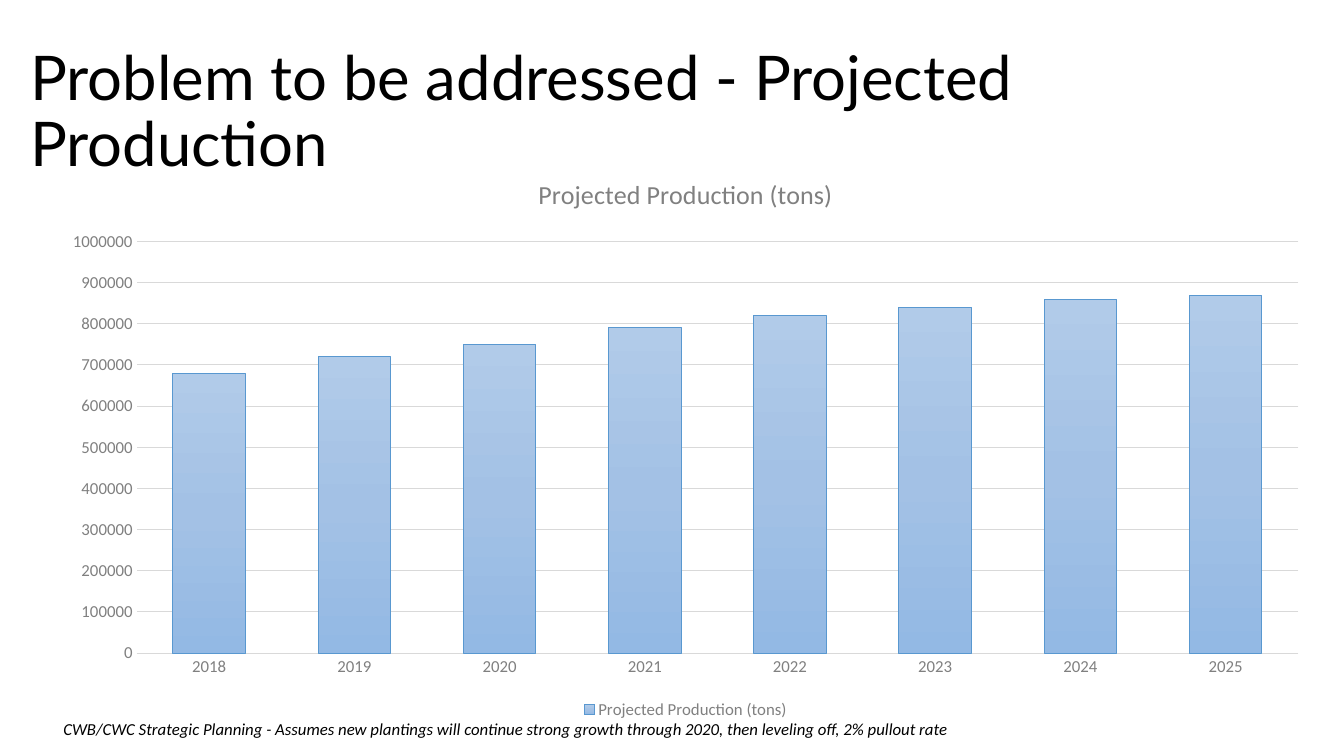
from lxml import etree
from pptx import Presentation
from pptx import util as u
from pptx.chart.data import CategoryChartData
from pptx.dml.color import RGBColor
from pptx.enum import chart as ch, text
from pptx.oxml.ns import qn

PX = 9144  # 100 px to the inch
BLACK = RGBColor(0x00, 0x00, 0x00)
GRAY = RGBColor(0x80, 0x80, 0x80)
RULE = RGBColor(0xD9, 0xD9, 0xD9)
EDGE = RGBColor(0x59, 0x98, 0xD0)
SHADES = [
    RGBColor(0xB1, 0xCB, 0xE9),
    RGBColor(0xA3, 0xC1, 0xE5),
    RGBColor(0x93, 0xB9, 0xE4),
]

YEARS = [str(year) for year in range(2018, 2026)]
TONS = [680000, 720000, 750000, 790000, 820000, 840000, 860000, 870000]


class Deck:
    head = "Lato"
    body = "Calibri"

    def __init__(self, wide, high):
        self.prs = Presentation()
        self.prs.slide_width = wide * PX
        self.prs.slide_height = high * PX
        self.slide = self.prs.slides.add_slide(self.prs.slide_layouts[6])

    def style(self, font, size, color, name=None):
        font.name = name or self.body
        font.size = u.Pt(size)
        font.color.rgb = color
        font.bold = False

    def label(self, words, box, size, name, slant=False, space=1.0,
              anchor=text.MSO_ANCHOR.TOP):
        frame = self.slide.shapes.add_textbox(*[n * PX for n in box]).text_frame
        frame.word_wrap = True
        frame.vertical_anchor = anchor
        frame.text = words
        para = frame.paragraphs[0]
        para.line_spacing = space
        font = para.runs[0].font
        self.style(font, size, BLACK, name)
        font.italic = slant

    def shade(self, fmt):
        """Fill with evenly spaced stops from top to bottom."""
        fmt.fill.gradient()
        grad = fmt._element.find(".//" + qn("a:gradFill"))
        for part in list(grad):
            grad.remove(part)
        stops = etree.SubElement(grad, qn("a:gsLst"))
        for i, color in enumerate(SHADES):
            pos = i * 100000 // (len(SHADES) - 1)
            stop = etree.SubElement(stops, qn("a:gs"), pos=str(pos))
            etree.SubElement(stop, qn("a:srgbClr"), val=str(color))
        etree.SubElement(grad, qn("a:lin"), ang="5400000", scaled="0")

    def rule(self, line, color):
        line.color.rgb = color
        line.width = u.Pt(0.75)

    def columns(self, name, cats, vals, box):
        data = CategoryChartData(number_format="General")
        data.categories = cats
        data.add_series(name, vals)
        chart = self.slide.shapes.add_chart(
            ch.XL_CHART_TYPE.COLUMN_CLUSTERED, *[n * PX for n in box], data
        ).chart
        self.style(chart.font, 10, BLACK)

        # Chart title and legend
        chart.has_title = True
        title = chart.chart_title
        title.include_in_layout = False
        title.text_frame.text = name
        self.style(title.text_frame.paragraphs[0].runs[0].font, 18.6, GRAY)
        chart.has_legend = True
        chart.legend.position = ch.XL_LEGEND_POSITION.BOTTOM
        chart.legend.include_in_layout = False
        self.style(chart.legend.font, 12, GRAY)

        # Axes
        for axis in (chart.category_axis, chart.value_axis):
            axis.major_tick_mark = ch.XL_TICK_MARK.NONE
            axis.minor_tick_mark = ch.XL_TICK_MARK.NONE
            self.style(axis.tick_labels.font, 12, GRAY)
        self.rule(chart.category_axis.format.line, RULE)
        scale = chart.value_axis
        scale.minimum_scale = 0
        scale.maximum_scale = 1000000
        scale.major_unit = 100000
        scale.tick_labels.number_format = "General"
        scale.tick_labels.number_format_is_linked = False
        scale.format.line.fill.background()
        self.rule(scale.major_gridlines.format.line, RULE)

        # Bars
        plot = chart.plots[0]
        plot.gap_width = 100
        plot.overlap = -24
        plot.vary_by_categories = False
        bars = plot.series[0]
        self.shade(bars.format)
        self.rule(bars.format.line, EDGE)


def main():
    deck = Deck(1333, 750)
    # Heading
    deck.label("Problem to be addressed - Projected Production",
               (20, 40, 1293, 145), 44, deck.head, space=0.9,
               anchor=text.MSO_ANCHOR.MIDDLE)
    # Production chart
    deck.columns("Projected Production (tons)", YEARS, TONS,
                 (47, 154, 1266, 564))
    # Source note
    deck.label("CWB/CWC Strategic Planning - Assumes new plantings will "
               "continue strong growth through 2020, then leveling off, "
               "2% pullout rate",
               (53, 708, 1253, 61), 12, deck.body, slant=True)
    deck.prs.save("out.pptx")


if __name__ == "__main__":
    main()
